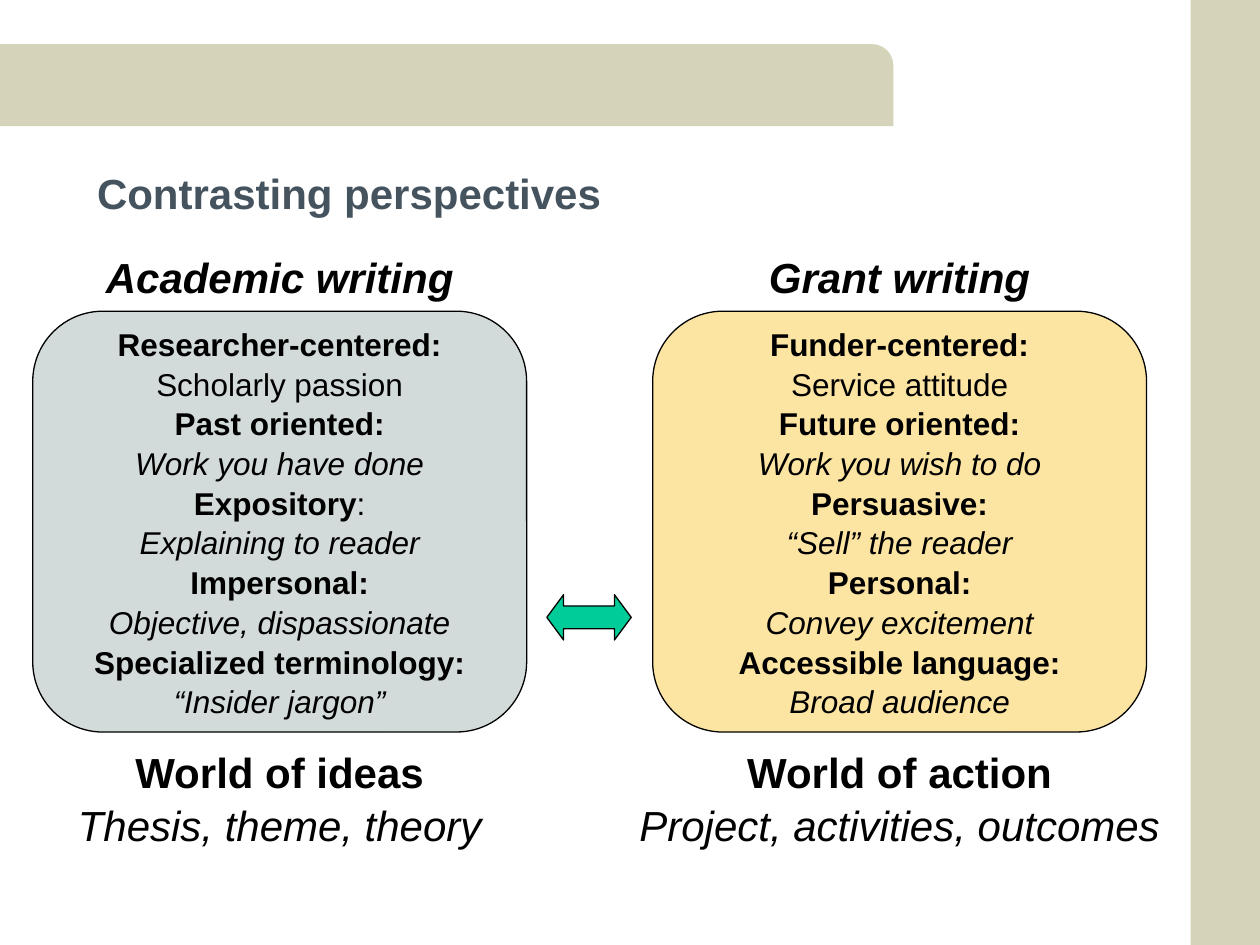
"""Build a slide contrasting academic writing with grant writing."""
from dataclasses import dataclass

from pptx import Presentation
from pptx.dml.color import RGBColor
from pptx.enum.shapes import MSO_SHAPE
from pptx.enum.text import MSO_ANCHOR, PP_ALIGN
from pptx.util import Inches, Pt

SAND = RGBColor(0xD5, 0xD3, 0xB9)
SLATE = RGBColor(0x45, 0x53, 0x5F)
GRAY = RGBColor(0xD3, 0xDB, 0xDA)
YELLOW = RGBColor(0xFC, 0xE4, 0xA2)
GREEN = RGBColor(0x00, 0xCC, 0x99)
BLACK = RGBColor(0x00, 0x00, 0x00)

PANEL_WIDTH = 3.92
LINE_SPACING = 1.05


@dataclass(frozen=True)
class Line:
    text: str
    bold: bool = False
    italic: bool = False
    plain_tail: str = ""


@dataclass(frozen=True)
class Perspective:
    left: float
    color: RGBColor
    heading: str
    heading_width: float
    lines: list[Line]
    world: str
    examples: str
    world_width: float


def label(text: str, plain_tail: str = "") -> Line:
    return Line(text, bold=True, plain_tail=plain_tail)


def detail(text: str) -> Line:
    return Line(text, italic=True)


PERSPECTIVES = [
    Perspective(
        0.26, GRAY, "Academic writing", 3.5,
        [
            label("Researcher-centered:"), Line("Scholarly passion"),
            label("Past oriented:"), detail("Work you have done"),
            label("Expository", ":"), detail("Explaining to reader"),
            label("Impersonal:"), detail("Objective, dispassionate"),
            label("Specialized terminology:"), detail("“Insider jargon”"),
        ],
        "World of ideas", "Thesis, theme, theory", 3.44,
    ),
    Perspective(
        5.18, YELLOW, "Grant writing", 2.38,
        [
            label("Funder-centered:"), Line("Service attitude"),
            label("Future oriented:"), detail("Work you wish to do"),
            label("Persuasive:"), detail("“Sell” the reader"),
            label("Personal:"), detail("Convey excitement"),
            label("Accessible language:"), detail("Broad audience"),
        ],
        "World of action", "Project, activities, outcomes", 4.33,
    ),
]


def add_filled_shape(slide, kind: MSO_SHAPE, left: float, top: float, width: float,
                     height: float, color: RGBColor, outlined: bool = False):
    shape = slide.shapes.add_shape(
        kind, Inches(left), Inches(top), Inches(width), Inches(height))
    shape.shadow.inherit = False
    shape.fill.solid()
    shape.fill.fore_color.rgb = color
    if outlined:
        shape.line.color.rgb = BLACK
        shape.line.width = Pt(0.75)
    else:
        shape.line.fill.background()
    return shape


def write_lines(text_frame, lines: list[Line], size: int) -> None:
    text_frame.word_wrap = False
    for index, line in enumerate(lines):
        paragraph = text_frame.add_paragraph() if index else text_frame.paragraphs[0]
        paragraph.alignment = PP_ALIGN.CENTER
        paragraph.line_spacing = LINE_SPACING
        font = paragraph.font
        font.name, font.size = "Arial", Pt(size)
        font.color.rgb = BLACK
        run = paragraph.add_run()
        run.text = line.text
        if line.plain_tail:
            run.font.bold, run.font.italic = line.bold, line.italic
            paragraph.add_run().text = line.plain_tail
        else:
            font.bold, font.italic = line.bold, line.italic


def add_caption(slide, center: float, top: float, width: float, height: float,
                lines: list[Line]) -> None:
    box = slide.shapes.add_textbox(
        Inches(center - width / 2), Inches(top), Inches(width), Inches(height))
    write_lines(box.text_frame, lines, 24)


def add_perspective(slide, perspective: Perspective) -> None:
    panel = add_filled_shape(slide, MSO_SHAPE.ROUNDED_RECTANGLE, perspective.left, 2.47,
                             PANEL_WIDTH, 3.34, perspective.color, outlined=True)
    panel.text_frame.vertical_anchor = MSO_ANCHOR.MIDDLE
    write_lines(panel.text_frame, perspective.lines, 18)
    center = perspective.left + PANEL_WIDTH / 2
    add_caption(slide, center, 1.93, perspective.heading_width, 0.5,
                [Line(perspective.heading, bold=True, italic=True)])
    add_caption(slide, center, 5.86, perspective.world_width, 1.3,
                [label(perspective.world), detail(perspective.examples)])


def set_title(slide, text: str) -> None:
    title = slide.shapes.title
    title.left, title.top = Inches(0.67), Inches(1.26)
    title.width, title.height = Inches(8.5), Inches(0.63)
    title.text_frame.text = text
    title.text_frame.vertical_anchor = MSO_ANCHOR.TOP
    paragraph = title.text_frame.paragraphs[0]
    paragraph.alignment = PP_ALIGN.LEFT
    paragraph.line_spacing = LINE_SPACING
    font = paragraph.font
    font.name, font.size, font.bold = "Arial", Pt(24), True
    font.color.rgb = SLATE


def main() -> None:
    presentation = Presentation()
    presentation.slide_width, presentation.slide_height = Inches(10), Inches(7.5)
    slide = presentation.slides.add_slide(presentation.slide_layouts[5])
    add_filled_shape(slide, MSO_SHAPE.RECTANGLE, 9.45, 0, 0.55, 7.5, SAND)
    band = add_filled_shape(slide, MSO_SHAPE.ROUND_1_RECTANGLE, 0, 0.35, 7.09, 0.65, SAND)
    band.adjustments[0] = 0.26
    set_title(slide, "Contrasting perspectives")
    for perspective in PERSPECTIVES:
        add_perspective(slide, perspective)
    arrow = add_filled_shape(slide, MSO_SHAPE.LEFT_RIGHT_ARROW, 4.34, 4.72, 0.67, 0.36,
                             GREEN, outlined=True)
    arrow.adjustments[1] = 0.37
    presentation.save("out.pptx")


if __name__ == "__main__":
    main()
